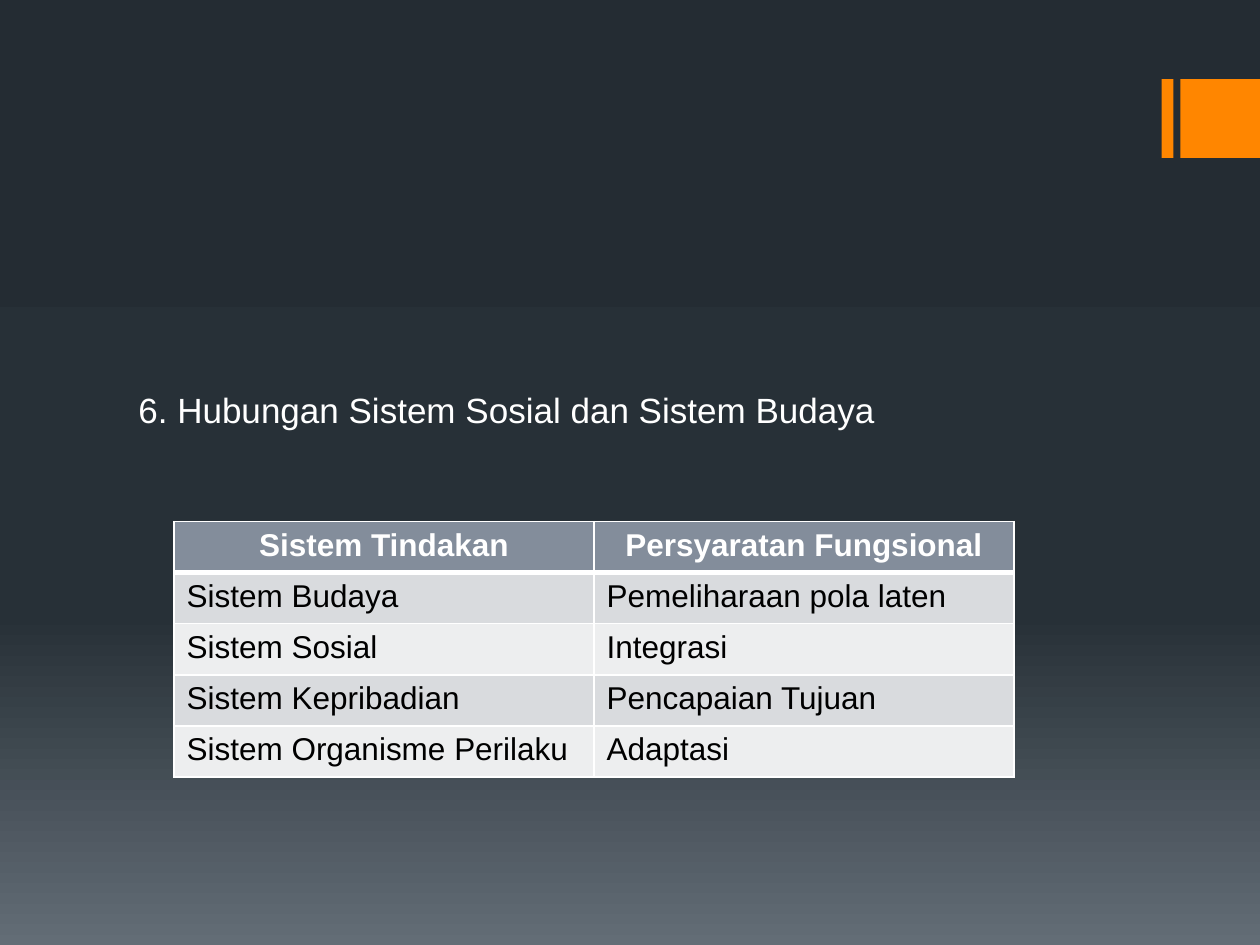
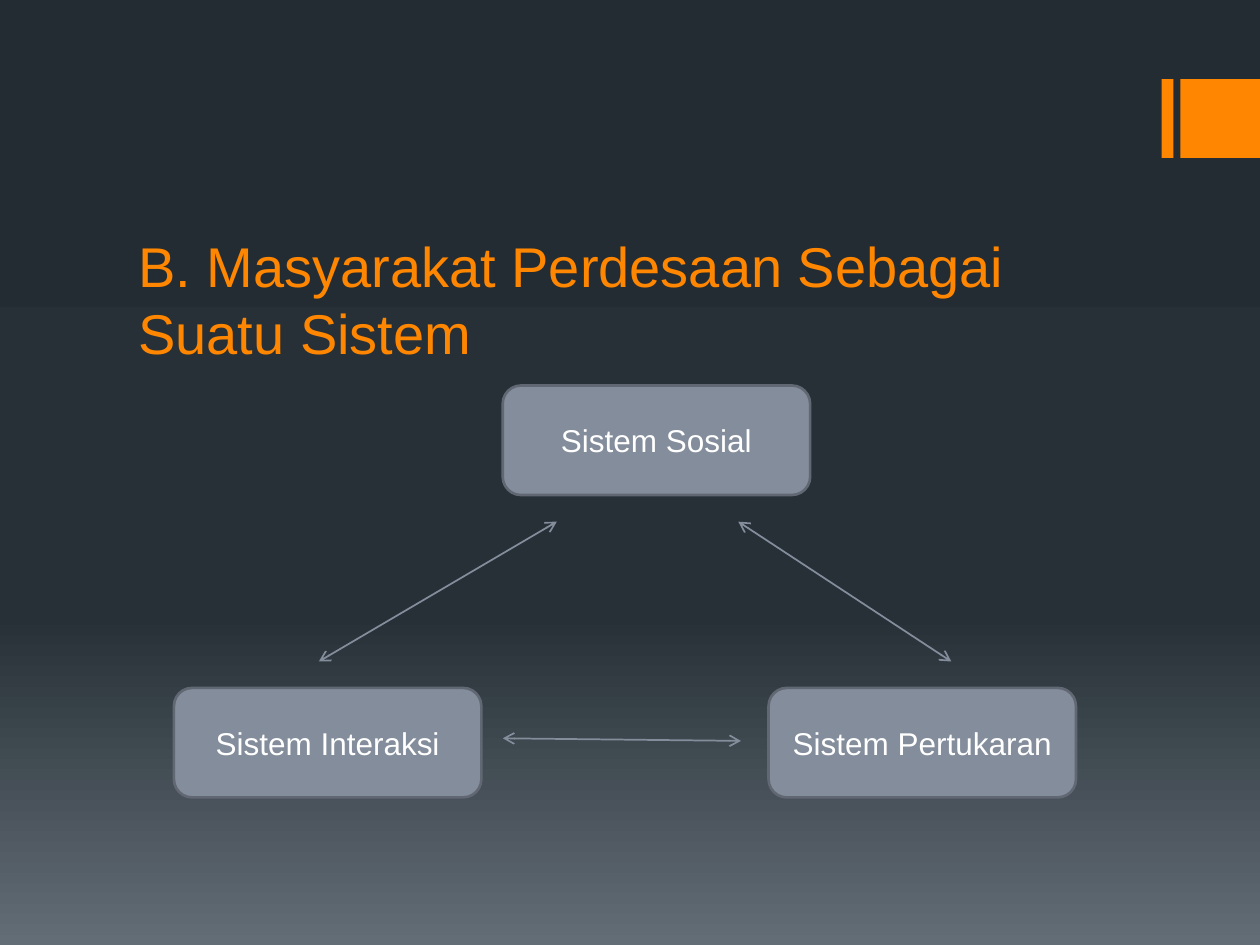
from copy import deepcopy

from lxml import etree
from pptx import Presentation
from pptx.dml.color import RGBColor
from pptx.enum.shapes import MSO_CONNECTOR, MSO_SHAPE
from pptx.enum.text import MSO_ANCHOR, PP_ALIGN
from pptx.oxml.ns import qn
from pptx.util import Pt

RECT, ROUND = MSO_SHAPE.RECTANGLE, MSO_SHAPE.ROUNDED_RECTANGLE
STRAIGHT = MSO_CONNECTOR.STRAIGHT
TOP, MIDDLE, BOTTOM = MSO_ANCHOR.TOP, MSO_ANCHOR.MIDDLE, MSO_ANCHOR.BOTTOM
LEFT, CENTER = PP_ALIGN.LEFT, PP_ALIGN.CENTER

FONT = "Arial"
COLORS = {
    "accent": "FF8600", "white": "FFFFFF", "black": "000000",
    "slate": "838D9B", "outline": "616873",
    "band_dark": "D9DBDE", "band_light": "EDEEEF",
}
BACKGROUND = [(0, "242C33"), (0.65, "273037"), (1, "636D76")]

SUBHEADING = "6. Hubungan Sistem Sosial dan Sistem Budaya"
SYSTEMS = [
    ("Sistem Tindakan", "Persyaratan Fungsional"),
    ("Sistem Budaya", "Pemeliharaan pola laten"),
    ("Sistem Sosial", "Integrasi"),
    ("Sistem Kepribadian", "Pencapaian Tujuan"),
    ("Sistem Organisme Perilaku", "Adaptasi"),
]
TITLE = "B. Masyarakat Perdesaan Sebagai Suatu Sistem"
NODES = [
    ("Sistem Sosial", 287.3, 220.3),
    ("Sistem Pertukaran", 439.2, 393.1),
    ("Sistem Interaksi", 99.4, 393.1),
]
NODE_SIZE = (175.7, 62.6)
ARROWS = [
    (182.2, 378, 318.2, 298.1),
    (421.9, 298.1, 543.6, 378),
    (287.3, 421.9, 423.4, 423.4),
]
MARKERS = [(663.8, 6.8), (674.6, 45.4)]
MARKER_TOP, MARKER_HEIGHT = 45.2, 45
TABLE_BOX = (99.4, 298, 480, 146)


def rgb(name):
    return RGBColor.from_string(COLORS[name])


def pts(*values):
    return [Pt(v) for v in values]


def write(tf, text, size=18, color="white", bold=False, align=LEFT, anchor=TOP):
    tf.word_wrap = True
    tf.vertical_anchor = anchor
    p = tf.paragraphs[0]
    p.alignment = align
    r = p.add_run()
    r.text = text
    r.font.name, r.font.size, r.font.bold = FONT, Pt(size), bold
    r.font.color.rgb = rgb(color)


def add_text(s, box, text, **fmt):
    write(s.shapes.add_textbox(*pts(*box)).text_frame, text, **fmt)


def add_box(s, kind, box, fill, line=None):
    sp = s.shapes.add_shape(kind, *pts(*box))
    sp.shadow.inherit = False
    sp.fill.solid()
    sp.fill.fore_color.rgb = rgb(fill)
    if line:
        sp.line.color.rgb = rgb(line)
        sp.line.width = Pt(1.5)
    else:
        sp.line.fill.background()
    return sp


def add_slide(prs):
    s = prs.slides.add_slide(prs.slide_layouts[6])
    fill = s.background.fill
    fill.gradient()
    fill.gradient_angle = 270
    stops = s.background._cSld.find(".//" + qn("a:gsLst"))
    stops.append(deepcopy(stops[-1]))
    for stop, (position, color) in zip(fill.gradient_stops, BACKGROUND):
        stop.position = position
        stop.color.rgb = RGBColor.from_string(color)
    for left, width in MARKERS:
        add_box(s, RECT, (left, MARKER_TOP, width, MARKER_HEIGHT), "accent")
    return s


def set_borders(cell, **widths):
    tcPr = cell._tc.get_or_add_tcPr()
    for i, side in enumerate("LRTB"):
        ln = etree.Element(qn("a:ln" + side), w=str(Pt(widths.get(side, 1))))
        fill = etree.SubElement(ln, qn("a:solidFill"))
        etree.SubElement(fill, qn("a:srgbClr"), val=COLORS["white"])
        tcPr.insert(i, ln)


def add_table(s, rows, box):
    table = s.shapes.add_table(len(rows), len(rows[0]), *pts(*box)).table
    for i, row in enumerate(rows):
        header = i == 0
        fill = "slate" if header else "band_dark" if i % 2 else "band_light"
        for j, text in enumerate(row):
            cell = table.cell(i, j)
            set_borders(cell, T=3 if i == 1 else 1, B=3 if header else 1)
            cell.fill.solid()
            cell.fill.fore_color.rgb = rgb(fill)
            write(cell.text_frame, text, bold=header,
                  color="white" if header else "black",
                  align=CENTER if header else LEFT)


def add_arrow(s, ends):
    c = s.shapes.add_connector(STRAIGHT, *pts(*ends))
    c.line.color.rgb = rgb("slate")
    c.line.width = Pt(1)
    ln = c.line._get_or_add_ln()
    for end in ("headEnd", "tailEnd"):
        etree.SubElement(ln, qn("a:" + end), type="arrow")
    etree.SubElement(c._element.spPr, qn("a:effectLst"))


def main():
    prs = Presentation()
    prs.slide_width, prs.slide_height = pts(720, 540)

    s = add_slide(prs)
    add_text(s, (72, 218.2, 576, 278.6), SUBHEADING, size=20)
    add_table(s, SYSTEMS, TABLE_BOX)

    s = add_slide(prs)
    add_text(s, (72, 121.7, 576, 90.7), TITLE, size=32, color="accent", anchor=BOTTOM)
    for text, left, top in NODES:
        sp = add_box(s, ROUND, (left, top, *NODE_SIZE), "slate", "outline")
        write(sp.text_frame, text, align=CENTER, anchor=MIDDLE)
    for ends in ARROWS:
        add_arrow(s, ends)

    prs.save("out.pptx")


if __name__ == "__main__":
    main()
